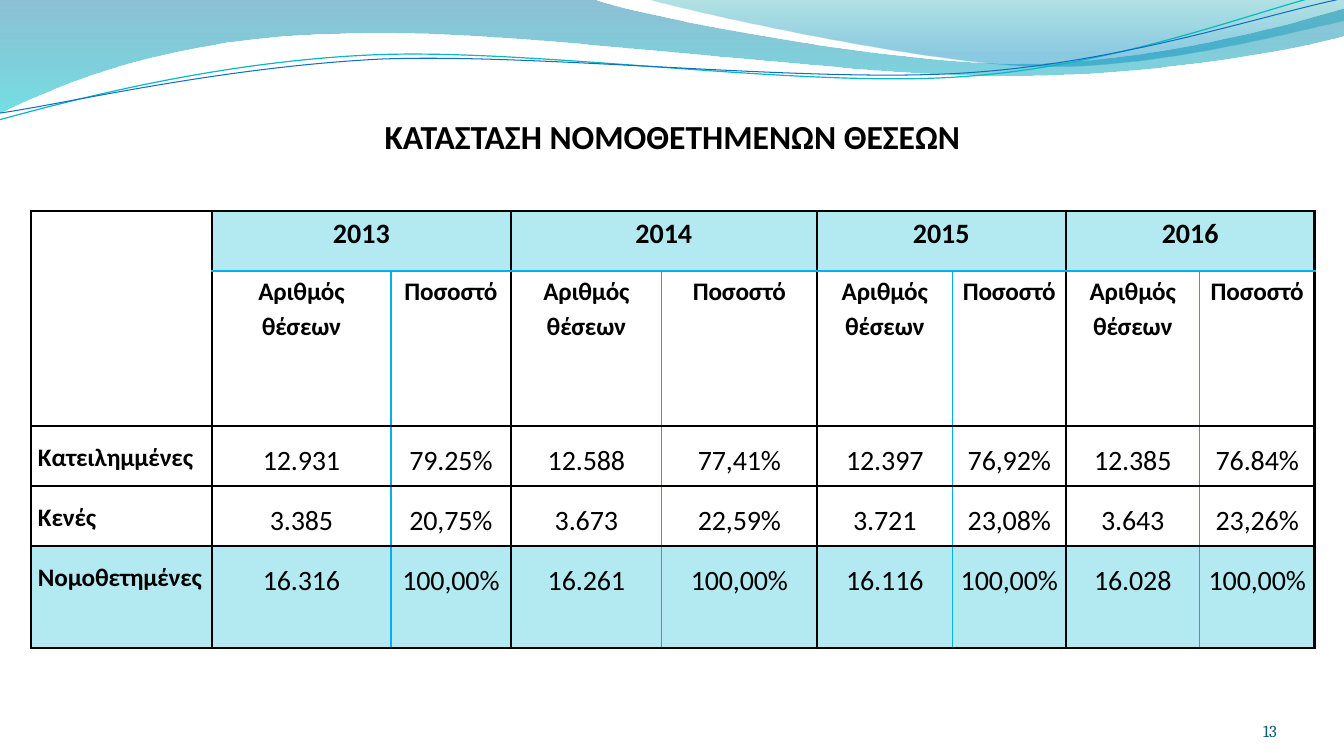
"""Slide with a table of statutory posts from 2013 to 2016 under a wave header."""
import math

from lxml import etree
from pptx import Presentation, util as u
from pptx.dml.color import RGBColor
from pptx.enum import text
from pptx.oxml import ns

SCALE = 914400 / 100.8
COLORS = {
    "black": "000000", "border": "00B0F0", "band": "B3EAF2", "number": "045D75",
    "teal_line": "0AB8BF", "blue_line": "0F6FC6",
    "left_top": "0074A1", "left_bottom": "00C6CF",
    "right_top": "00A1A9", "right_bottom": "008BBF",
}
ALIGN = text.PP_ALIGN


def px(value):
    return u.Emu(round(value * SCALE))


def write(frame, lines, color="black", align=ALIGN.CENTER, spacing=1.0, tracking=0, **font):
    frame.word_wrap = True
    for index, line in enumerate(lines):
        paragraph = frame.add_paragraph() if index else frame.paragraphs[0]
        paragraph.alignment, paragraph.line_spacing = align, spacing
        run = paragraph.add_run()
        run.text = line
        run.font.color.rgb = RGBColor.from_string(COLORS[color])
        if tracking:
            run._r.get_or_add_rPr().set("spc", str(tracking))
        for name, value in font.items():
            setattr(run.font, name, value)


presentation = Presentation()
presentation.slide_width, presentation.slide_height = px(1344), px(756)
slide = presentation.slides.add_slide(presentation.slide_layouts[6])

waves = [
    {"start": (0, 0), "steps": [
        [(592, -1)], [(639, 17), (892, 64), (1019, 64)], [(1147, 64), (1288, 26), (1344, 9)],
        [(1346, 36)], [(1321, 44), (1169, 77), (1002, 76)], [(836, 76), (513, 28), (346, 34)],
        [(173, 36), (61, 84), (-1, 114)], [(0, 0)]],
     "stops": [(0, "left_top", 45), (1, "left_bottom", 55)]},
    {"start": (644, -1), "steps": [
        [(684, 11), (916, 62), (1033, 66)], [(1150, 70), (1292, 32), (1344, 21)],
        [(1344, 0)], [(644, -1)]],
     "stops": [(0, "right_top", 30), (0.8, "right_bottom", 45)]},
    {"start": (-1, 120), "steps": [
        [(65, 102), (213, 62), (372, 55)], [(531, 48), (796, 88), (958, 77)],
        [(1119, 67), (1262, 8), (1342, -10)]],
     "line": ("teal_line", 0.85), "tilt": 2.7},
    {"start": (0, 113), "steps": [
        [(64, 104), (220, 67), (381, 59)], [(541, 53), (803, 83), (963, 73)],
        [(1124, 63), (1265, 14), (1345, -2)]],
     "line": ("blue_line", 0.75), "tilt": 2.7},
]
center_x, center_y = 671, 58
for wave in waves:
    tilt = wave.get("tilt", 0)
    cosine, sine = math.cos(math.radians(tilt)), math.sin(math.radians(tilt))
    start, *steps = [
        [(px(center_x + (x - center_x) * cosine - (y - center_y) * sine),
          px(center_y + (x - center_x) * sine + (y - center_y) * cosine)) for x, y in step]
        for step in [[wave["start"]], *wave["steps"]]]
    builder = slide.shapes.build_freeform(*start[0], scale=1.0)
    builder.add_line_segments([step[-1] for step in steps], close="stops" in wave)
    shape = builder.convert_to_shape()
    for segment, step in zip(shape.element.xpath(".//a:lnTo"), steps):
        if len(step) == 3:
            segment.tag = ns.qn("a:cubicBezTo")
            for index, (x, y) in enumerate(step[:2]):
                control = etree.Element(
                    ns.qn("a:pt"), x=str(x - shape.left), y=str(y - shape.top))
                segment.insert(index, control)
    shape.rotation = -tilt
    shape.shadow.inherit = False
    if "line" in wave:
        color, width = wave["line"]
        shape.fill.background()
        shape.line.color.rgb = RGBColor.from_string(COLORS[color])
        shape.line.width = u.Pt(width)
        continue
    shape.line.fill.background()
    shape.fill.gradient()
    shape.fill.gradient_angle = 270
    for stop, (position, color, opacity) in zip(shape.fill.gradient_stops, wave["stops"]):
        stop.position = position
        stop.color.rgb = RGBColor.from_string(COLORS[color])
    for element, (_, _, opacity) in zip(shape.element.xpath(".//a:srgbClr"), wave["stops"]):
        etree.SubElement(element, ns.qn("a:alpha"), val=str(opacity * 1000))

labels = [
    ((219, 77, 907, 79), 5, "ΚΑΤΑΣΤΑΣΗ ΝΟΜΟΘΕΤΗΜΕΝΩΝ ΘΕΣΕΩΝ",
     {"size": u.Pt(24), "name": "Calibri", "bold": True}),
    ((1165, 701, 112, 40), 0, "13",
     {"size": u.Pt(12), "name": "Cambria", "color": "number", "align": ALIGN.RIGHT}),
]
for box, top_inset, content, style in labels:
    frame = slide.shapes.add_textbox(*map(px, box)).text_frame
    layout = {"margin_left": 0, "margin_right": 0, "margin_bottom": 0,
              "margin_top": px(top_inset), "vertical_anchor": text.MSO_ANCHOR.BOTTOM}
    for name, value in layout.items():
        setattr(frame, name, value)
    write(frame, [content], **style)

widths = [181, 179, 120, 151, 155, 136, 113, 134, 115]
heights = [60, 155, 60, 60, 102]
rows = [
    ["", "2013", "", "2014", "", "2015", "", "2016", ""],
    [""] + ["Αριθμός\nθέσεων", "Ποσοστό"] * 4,
    ["Κατειλημμένες", "12.931", "79.25%", "12.588", "77,41%",
     "12.397", "76,92%", "12.385", "76.84%"],
    ["Κενές", "3.385", "20,75%", "3.673", "22,59%", "3.721", "23,08%", "3.643", "23,26%"],
    ["Νομοθετημένες", "16.316", "100,00%", "16.261", "100,00%",
     "16.116", "100,00%", "16.028", "100,00%"],
]
table = slide.shapes.add_table(
    len(rows), len(widths), px(31), px(211), px(sum(widths)), px(sum(heights))).table
table.first_row = table.horz_banding = False
for column, width in zip(table.columns, widths):
    column.width = px(width)
for row, height in zip(table.rows, heights):
    row.height = px(height)
table.cell(0, 0).merge(table.cell(1, 0))
for c in range(1, 9, 2):
    table.cell(0, c).merge(table.cell(0, c + 1))

insets = {"margin_left": px(7), "margin_top": px(1), "margin_right": px(7), "margin_bottom": 0}
heavy, thin, edge = ("black", 1.5), ("border", 1), ("black", 2.25)
for r, values in enumerate(rows):
    for c, value in enumerate(values):
        cell = table.cell(r, c)
        for name, inset in insets.items():
            setattr(cell, name, inset)
        inner = r > 0 and c > 0
        last = c == 8 or (r == 0 and c == 7)
        borders = {
            "a:lnL": thin if inner and c % 2 == 0 else heavy,
            "a:lnR": edge if last else thin if inner and c % 2 else heavy,
            "a:lnT": thin if c and r == 1 else heavy,
            "a:lnB": thin if c and r == 0 else heavy,
        }
        for tag, (color, width) in borders.items():
            line = etree.SubElement(cell._tc.get_or_add_tcPr(), ns.qn(tag), w=str(u.Pt(width)))
            solid = etree.SubElement(line, ns.qn("a:solidFill"))
            etree.SubElement(solid, ns.qn("a:srgbClr"), val=COLORS[color])
        if r == 4 or (r == 0 and c):
            cell.fill.solid()
            cell.fill.fore_color.rgb = RGBColor.from_string(COLORS["band"])
        else:
            cell.fill.background()
        if value:
            write(cell.text_frame, value.split("\n"),
                  align=ALIGN.CENTER if c else ALIGN.JUSTIFY,
                  spacing=1.15 if r < 2 else 1.5, tracking=-10 if r else 0, name="Calibri",
                  size=u.Pt(18 if r == 1 or c == 0 else 20), bold=r < 2 or c == 0)

presentation.save("out.pptx")
